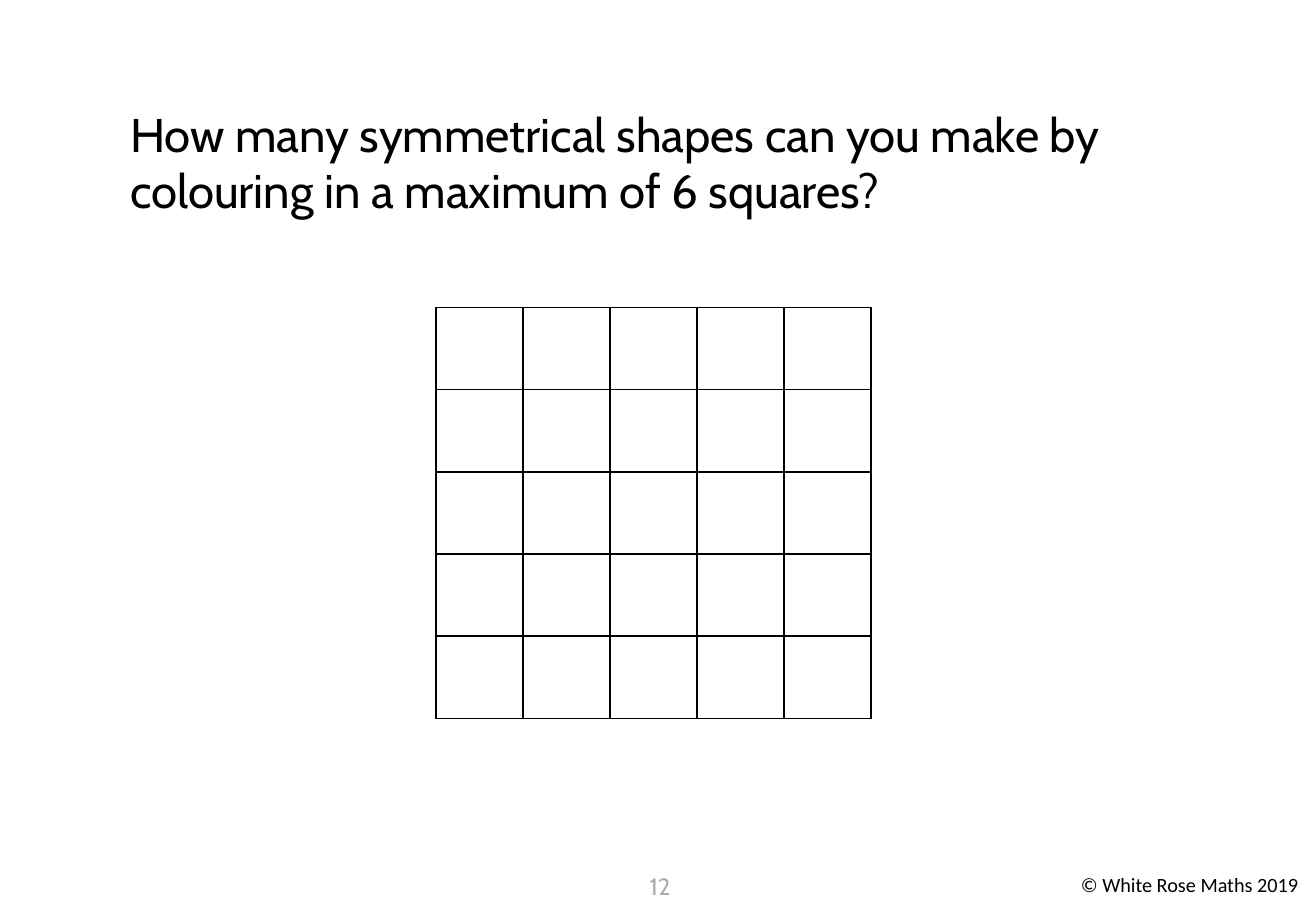
from dataclasses import dataclass

from lxml import etree
from pptx import Presentation
from pptx.dml.color import RGBColor
from pptx.enum.text import MSO_ANCHOR, MSO_AUTO_SIZE, PP_ALIGN
from pptx.oxml.ns import qn
from pptx.util import Pt

TOP = MSO_ANCHOR.TOP
NO_FIT = MSO_AUTO_SIZE.NONE
LEFT, CENTER = PP_ALIGN.LEFT, PP_ALIGN.CENTER
TITLE_ONLY = 5


@dataclass(frozen=True)
class Theme:
    ink: str = "000000"
    muted: str = "AFABAB"
    paper: str = "FFFFFF"
    font: str = "Cabin"
    footer_font: str = "Calibri"
    title_size: float = 28
    number_size: float = 14
    footer_size: float = 12
    border: float = 1


def write(tf, text, *, font, size, color, align=LEFT):
    tf.word_wrap = True
    tf.auto_size = NO_FIT
    tf.vertical_anchor = TOP
    p = tf.paragraphs[0]
    p.alignment = align
    r = p.add_run()
    r.text = text
    r.font.name = font
    r.font.size = Pt(size)
    r.font.color.rgb = RGBColor.from_string(color)


class Page:
    """Draws styled elements on one slide, with lengths in points."""

    def __init__(self, prs, theme):
        self.theme = theme
        self.s = prs.slides.add_slide(prs.slide_layouts[TITLE_ONLY])
        self.s.background.fill.solid()
        self.s.background.fill.fore_color.rgb = RGBColor.from_string(theme.paper)

    def title(self, text, x, y, w, h):
        sp = self.s.shapes.title
        sp.left, sp.top, sp.width, sp.height = Pt(x), Pt(y), Pt(w), Pt(h)
        write(sp.text_frame, text, font=self.theme.font,
              size=self.theme.title_size, color=self.theme.ink)

    def label(self, text, x, y, w, h, **style):
        sp = self.s.shapes.add_textbox(Pt(x), Pt(y), Pt(w), Pt(h))
        write(sp.text_frame, text, **style)

    def grid(self, count, x, y, cell_w, cell_h):
        tbl = self.s.shapes.add_table(count, count, Pt(x), Pt(y),
                                      Pt(count * cell_w), Pt(count * cell_h)).table
        tbl.first_row = tbl.horz_banding = False
        for col in tbl.columns:
            col.width = Pt(cell_w)
        for row in tbl.rows:
            row.height = Pt(cell_h)
        for cell in tbl.iter_cells():
            self.outline(cell)
            cell.fill.solid()
            cell.fill.fore_color.rgb = RGBColor.from_string(self.theme.paper)

    def outline(self, cell):
        tc_pr = cell._tc.get_or_add_tcPr()
        for side in ("a:lnL", "a:lnR", "a:lnT", "a:lnB"):
            ln = etree.SubElement(tc_pr, qn(side), w=str(Pt(self.theme.border)))
            fill = etree.SubElement(ln, qn("a:solidFill"))
            etree.SubElement(fill, qn("a:srgbClr"), val=self.theme.ink)


def main():
    prs = Presentation()
    prs.slide_width, prs.slide_height = Pt(780), Pt(540)
    theme = Theme()
    page = Page(prs, theme)
    page.title("How many symmetrical shapes can you make by colouring in "
               "a maximum of 6 squares?", 70, 58.5, 634, 109)
    page.grid(5, 258.5, 182.3, 51.55, 48.7)
    page.label("12", 373, 513.4, 36.5, 26, font=theme.font,
               size=theme.number_size, color=theme.muted, align=CENTER)
    page.label("© White Rose Maths 2019", 633.6, 513.4, 146.4, 22,
               font=theme.footer_font, size=theme.footer_size, color=theme.ink)
    prs.save("out.pptx")


if __name__ == "__main__":
    main()
